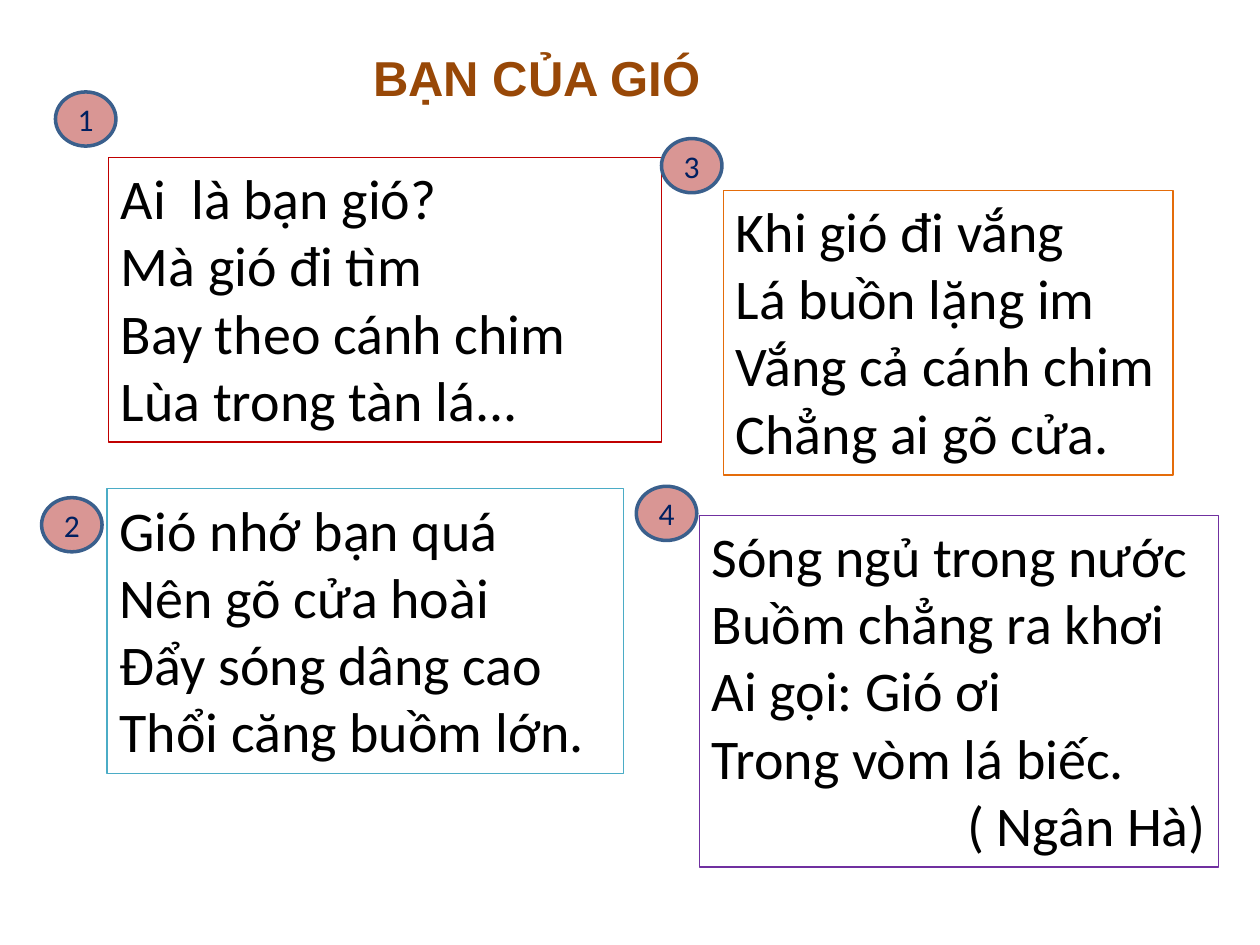
from dataclasses import dataclass

from pptx import Presentation
from pptx.dml.color import RGBColor
from pptx.enum.shapes import MSO_SHAPE
from pptx.enum.text import MSO_ANCHOR, MSO_AUTO_SIZE, PP_ALIGN
from pptx.shapes.autoshape import Shape
from pptx.slide import Slide
from pptx.util import Inches, Pt

COLORS = {
    "title": "984807",
    "verse": "000000",
    "badge_fill": "D99694",
    "badge_line": "3A5F8C",
    "badge_text": "002060",
    "red": "C00000",
    "teal": "4BACC6",
    "orange": "E46C0A",
    "purple": "7030A0",
}
BADGE_WIDTH, BADGE_HEIGHT = 0.48, 0.43


@dataclass
class Stanza:
    number: int
    box: tuple[float, float, float, float]
    badge: tuple[float, float]
    border: str
    verses: list[str]
    author: str = ""


STANZAS = [
    Stanza(1, (0.86, 1.25, 4.39, 2.26), (0.44, 0.73), "red",
           ["Ai  là bạn gió?", "Mà gió đi tìm", "Bay theo cánh chim", "Lùa trong tàn lá..."]),
    Stanza(2, (0.85, 3.88, 4.1, 2.26), (0.33, 3.95), "teal",
           ["Gió nhớ bạn quá", "Nên gõ cửa hoài", "Đẩy sóng dâng cao", "Thổi căng buồm lớn."]),
    Stanza(3, (5.74, 1.51, 3.57, 2.26), (5.25, 1.1), "orange",
           ["Khi gió đi vắng", "Lá buồn lặng im", "Vắng cả cánh chim", "Chẳng ai gõ cửa."]),
    Stanza(4, (5.55, 4.09, 4.12, 2.79), (5.05, 3.86), "purple",
           ["Sóng ngủ trong nước", "Buồm chẳng ra khơi", "Ai gọi: Gió ơi", "Trong vòm lá biếc."],
           "( Ngân Hà)"),
]


def color(name: str) -> RGBColor:
    return RGBColor.from_string(COLORS[name])


def write_lines(shape: Shape, lines: list[str], size: int, color_name: str,
                alignment: PP_ALIGN, font_name: str = "Calibri", bold: bool = False) -> None:
    text_frame = shape.text_frame
    text_frame.word_wrap = True
    text_frame.text = "\n".join(lines)
    for paragraph in text_frame.paragraphs:
        paragraph.alignment = alignment
        paragraph.font.name = font_name
        paragraph.font.size = Pt(size)
        paragraph.font.bold = bold
        paragraph.font.color.rgb = color(color_name)


def set_line(shape: Shape, color_name: str, width: float) -> None:
    shape.line.color.rgb = color(color_name)
    shape.line.width = Pt(width)


def add_text_box(slide: Slide, box: tuple[float, float, float, float]) -> Shape:
    shape = slide.shapes.add_textbox(*map(Inches, box))
    shape.text_frame.auto_size = MSO_AUTO_SIZE.SHAPE_TO_FIT_TEXT
    return shape


def add_stanza(slide: Slide, stanza: Stanza) -> None:
    shape = add_text_box(slide, stanza.box)
    set_line(shape, stanza.border, 0.75)
    lines = stanza.verses + ([stanza.author] if stanza.author else [])
    write_lines(shape, lines, 32, "verse", PP_ALIGN.LEFT)
    if stanza.author:
        shape.text_frame.paragraphs[-1].alignment = PP_ALIGN.RIGHT


def add_badge(slide: Slide, stanza: Stanza) -> None:
    left, top = stanza.badge
    shape = slide.shapes.add_shape(MSO_SHAPE.OVAL, Inches(left), Inches(top),
                                   Inches(BADGE_WIDTH), Inches(BADGE_HEIGHT))
    shape.shadow.inherit = False
    shape.fill.solid()
    shape.fill.fore_color.rgb = color("badge_fill")
    set_line(shape, "badge_line", 2)
    shape.text_frame.vertical_anchor = MSO_ANCHOR.MIDDLE
    write_lines(shape, [str(stanza.number)], 18, "badge_text", PP_ALIGN.CENTER)


def main() -> None:
    presentation = Presentation()
    presentation.slide_width = Inches(10)
    presentation.slide_height = Inches(7.5)
    slide = presentation.slides.add_slide(presentation.slide_layouts[6])

    for stanza in STANZAS:
        add_stanza(slide, stanza)
    title = add_text_box(slide, (2.78, 0.33, 2.96, 0.57))
    write_lines(title, ["BẠN CỦA GIÓ"], 28, "title", PP_ALIGN.CENTER, "Arial", bold=True)
    for stanza in STANZAS:
        add_badge(slide, stanza)

    presentation.save("out.pptx")


if __name__ == "__main__":
    main()
